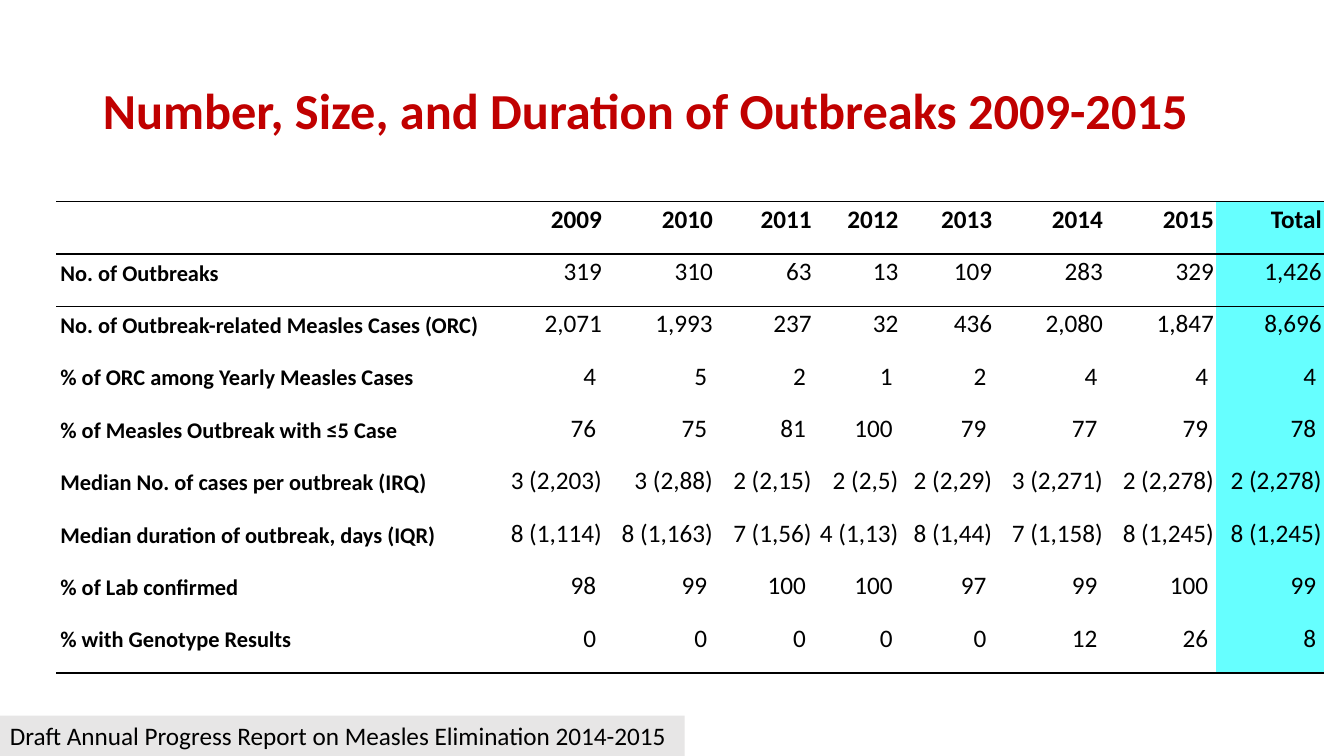
from lxml.etree import SubElement
from pptx import Presentation
from pptx.dml.color import RGBColor
from pptx.enum.shapes import MSO_SHAPE
from pptx.enum.text import MSO_ANCHOR, PP_ALIGN
from pptx.oxml.ns import qn
from pptx.util import Pt

EMU_PER_PX = 9144
FONT = "Calibri"
PLAIN_TABLE_STYLE = "{2D5ABB26-0587-4C30-8999-92F81FD0307C}"
COLORS = {
    "title": "C00000",
    "text": "000000",
    "rule": "000000",
    "total": "66FFFF",
    "source": "E7E6E6",
}
COLUMN_WIDTHS = [433, 112, 110, 98, 84, 93, 110, 110, 107]
ROW_HEIGHT = 52
FIRST_NARROW_COLUMN = 4
OUTBREAKS = [
    ["", "2009", "2010", "2011", "2012", "2013", "2014", "2015", "Total"],
    ["No. of Outbreaks", "319", "310", "63", "13", "109", "283", "329", "1,426"],
    ["No. of Outbreak-related Measles Cases (ORC)",
     "2,071", "1,993", "237", "32", "436", "2,080", "1,847", "8,696"],
    ["% of ORC among Yearly Measles Cases", "4", "5", "2", "1", "2", "4", "4", "4"],
    ["% of Measles Outbreak with ≤5 Case",
     "76", "75", "81", "100", "79", "77", "79", "78"],
    ["Median No. of cases per outbreak (IRQ)", "3 (2,203)", "3 (2,88)", "2 (2,15)",
     "2 (2,5)", "2 (2,29)", "3 (2,271)", "2 (2,278)", "2 (2,278)"],
    ["Median duration of outbreak, days (IQR)", "8 (1,114)", "8 (1,163)", "7 (1,56)",
     "4 (1,13)", "8 (1,44)", "7 (1,158)", "8 (1,245)", "8 (1,245)"],
    ["% of Lab confirmed", "98", "99", "100", "100", "97", "99", "100", "99"],
    ["% with Genotype Results", "0", "0", "0", "0", "0", "12", "26", "8"],
]


def px(length):
    return length * EMU_PER_PX


def color(name):
    return RGBColor.from_string(COLORS[name])


def add_text(paragraph, text, size, color_name="text", bold=False):
    run = paragraph.add_run()
    run.text = text
    run.font.name = FONT
    run.font.size = Pt(size)
    run.font.bold = bold
    run.font.color.rgb = color(color_name)


def add_rule(cell, side):
    rule = SubElement(cell._tc.get_or_add_tcPr(), qn(f"a:{side}"), w=str(Pt(1)))
    fill = SubElement(rule, qn("a:solidFill"))
    SubElement(fill, qn("a:srgbClr"), val=COLORS["rule"])


def place_title(slide, left, top, width, height):
    title = slide.shapes.title
    title.left, title.top = px(left), px(top)
    title.width, title.height = px(width), px(height)
    frame = title.text_frame
    frame.word_wrap = True
    frame.vertical_anchor = MSO_ANCHOR.MIDDLE
    heading = frame.paragraphs[0]
    heading.alignment = PP_ALIGN.LEFT
    heading.line_spacing = 0.9
    add_text(heading, "Number, Size, and Duration of Outbreaks 2009-2015",
             36, "title", True)


def fill_cell(cell, row, column, text):
    is_header, is_label = row == 0, column == 0
    if row <= 1:
        add_rule(cell, "lnT")
    if row in (0, len(OUTBREAKS) - 1):
        add_rule(cell, "lnB")
    if column == len(COLUMN_WIDTHS) - 1:
        cell.fill.solid()
        cell.fill.fore_color.rgb = color("total")
    else:
        cell.fill.background()
    cell.vertical_anchor = MSO_ANCHOR.MIDDLE
    cell.margin_left = cell.margin_right = px(4 if column < FIRST_NARROW_COLUMN else 2)
    cell.margin_top = cell.margin_bottom = 0
    paragraph = cell.text_frame.paragraphs[0]
    paragraph.alignment = PP_ALIGN.LEFT if is_label else PP_ALIGN.RIGHT
    paragraph.line_spacing = Pt(10)
    if text:
        add_text(paragraph, text, 16 if is_label else 18, bold=is_header or is_label)


def place_outbreak_table(slide, left, top):
    width, height = sum(COLUMN_WIDTHS), ROW_HEIGHT * len(OUTBREAKS)
    outbreaks = slide.shapes.add_table(
        len(OUTBREAKS), len(COLUMN_WIDTHS), px(left), px(top), px(width), px(height)
    ).table
    outbreaks.first_row = outbreaks.horz_banding = False
    outbreaks._tbl.tblPr.find(qn("a:tableStyleId")).text = PLAIN_TABLE_STYLE
    for column, column_width in enumerate(COLUMN_WIDTHS):
        outbreaks.columns[column].width = px(column_width)
    for row, entries in enumerate(OUTBREAKS):
        outbreaks.rows[row].height = px(ROW_HEIGHT)
        is_percentage = entries[0].startswith("%")
        for column, entry in enumerate(entries):
            text = f"{entry} " if is_percentage and column else entry
            fill_cell(outbreaks.cell(row, column), row, column, text)


def place_source(slide, left, top, width, height):
    source = slide.shapes.add_shape(
        MSO_SHAPE.RECTANGLE, px(left), px(top), px(width), px(height))
    source.shadow.inherit = False
    source.fill.solid()
    source.fill.fore_color.rgb = color("source")
    source.line.fill.background()
    frame = source.text_frame
    frame.word_wrap = False
    frame.vertical_anchor = MSO_ANCHOR.TOP
    citation = frame.paragraphs[0]
    citation.alignment = PP_ALIGN.LEFT
    add_text(citation, "Draft Annual Progress Report on Measles Elimination 2014-2015", 18)


def main():
    presentation = Presentation()
    presentation.slide_width, presentation.slide_height = px(1333), px(750)
    slide = presentation.slides.add_slide(presentation.slide_layouts[5])
    place_title(slide, 92, 40, 1150, 145)
    place_outbreak_table(slide, 56, 200)
    place_source(slide, 0, 710, 679, 40)
    presentation.save("out.pptx")


if __name__ == "__main__":
    main()
